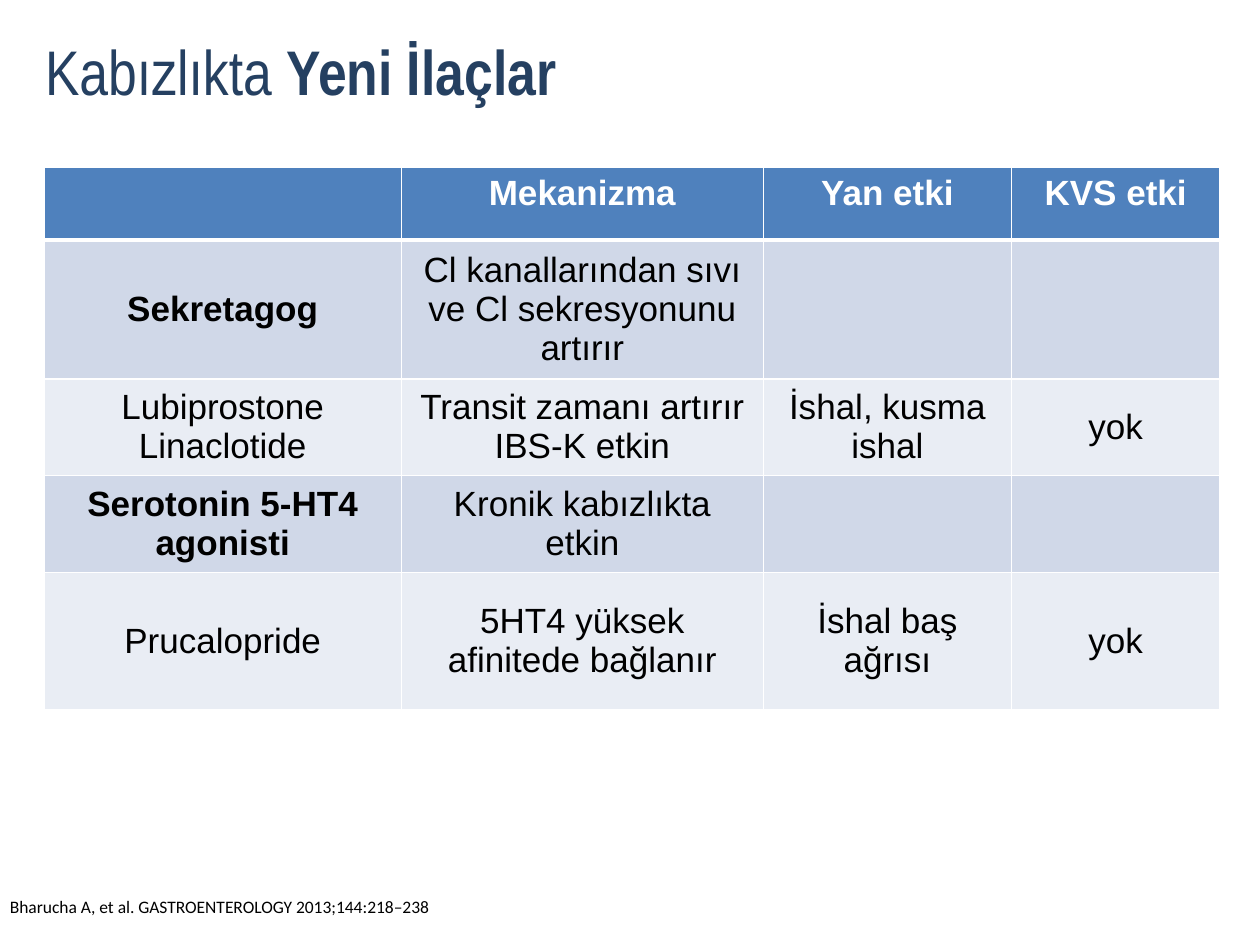
from lxml.etree import SubElement
from pptx import Presentation
from pptx.dml.color import RGBColor
from pptx.enum.text import MSO_ANCHOR as Anchor, MSO_AUTO_SIZE as AutoSize, PP_ALIGN as Align
from pptx.oxml.ns import qn
from pptx.util import Cm, Pt

COLORS = {
    "title": "254061",
    "header": "4F81BD",
    "band_dark": "D0D8E8",
    "band_light": "E9EDF4",
    "white": "FFFFFF",
    "black": "000000",
}


def add_line_of_text(slide, box, runs, font_name, size, color):
    textbox = slide.shapes.add_textbox(*[Cm(length) for length in box])
    frame = textbox.text_frame
    frame.word_wrap = True
    frame.auto_size = AutoSize.SHAPE_TO_FIT_TEXT
    for text, bold in runs:
        run = frame.paragraphs[0].add_run()
        run.text = text
        run.font.name = font_name
        run.font.size = Pt(size)
        run.font.bold = bold
        run.font.color.rgb = RGBColor.from_string(COLORS[color])


def add_border(cell, side, width):
    line = SubElement(cell._tc.get_or_add_tcPr(), qn(f"a:ln{side}"), w=str(Pt(width)))
    fill = SubElement(line, qn("a:solidFill"))
    SubElement(fill, qn("a:srgbClr"), val=COLORS["white"])


prs = Presentation()
prs.slide_width, prs.slide_height = Cm(25.4), Cm(19.05)
slide = prs.slides.add_slide(prs.slide_layouts[6])

add_line_of_text(slide, (0.66, 0.53, 24.64, 1.8),
                 [("Kabızlıkta ", False), ("Yeni İlaçlar", True)],
                 "Arial Narrow", 36, "title")
add_line_of_text(slide, (-0.05, 17.93, 18.8, 0.69),
                 [("Bharucha A, et al. GASTROENTEROLOGY 2013;144:218–238", False)],
                 "Calibri", 10, "black")

drug_rows = [
    ["", "Mekanizma", "Yan etki", "KVS etki"],
    ["Sekretagog", "Cl kanallarından sıvı ve Cl sekresyonunu artırır", "", ""],
    ["Lubiprostone\nLinaclotide", "Transit zamanı artırır\nIBS-K etkin",
     "İshal, kusma\nishal", "yok"],
    ["Serotonin 5-HT4 agonisti", "Kronik kabızlıkta etkin", "", ""],
    ["Prucalopride", "5HT4 yüksek afinitede bağlanır", "İshal baş ağrısı", "yok"],
]
column_widths = [7.2, 7.3, 5.0, 4.2]
row_heights = [1.46, 2.78, 1.95, 1.95, 2.78]
drug_classes = {"Sekretagog", "Serotonin 5-HT4 agonisti"}

drugs = slide.shapes.add_table(
    len(row_heights), len(column_widths), Cm(0.89), Cm(3.38),
    Cm(sum(column_widths)), Cm(sum(row_heights))).table
for column, width in zip(drugs.columns, column_widths):
    column.width = Cm(width)
for row, height in zip(drugs.rows, row_heights):
    row.height = Cm(height)

for r, texts in enumerate(drug_rows):
    is_header = r == 0
    band = "header" if is_header else "band_dark" if r % 2 else "band_light"
    for c, text in enumerate(texts):
        cell = drugs.cell(r, c)
        for side in "LRTB":
            under_header = (r, side) in [(0, "B"), (1, "T")]
            add_border(cell, side, 3 if under_header else 1)
        cell.fill.solid()
        cell.fill.fore_color.rgb = RGBColor.from_string(COLORS[band])
        cell.vertical_anchor = Anchor.TOP if is_header else Anchor.MIDDLE
        cell.text_frame.text = text
        for paragraph in cell.text_frame.paragraphs:
            paragraph.alignment = Align.CENTER
            for run in paragraph.runs:
                run.font.name = "Arial"
                run.font.size = Pt(20)
                run.font.bold = is_header or text in drug_classes
                run.font.color.rgb = RGBColor.from_string(
                    COLORS["white" if is_header else "black"])

prs.save("out.pptx")
